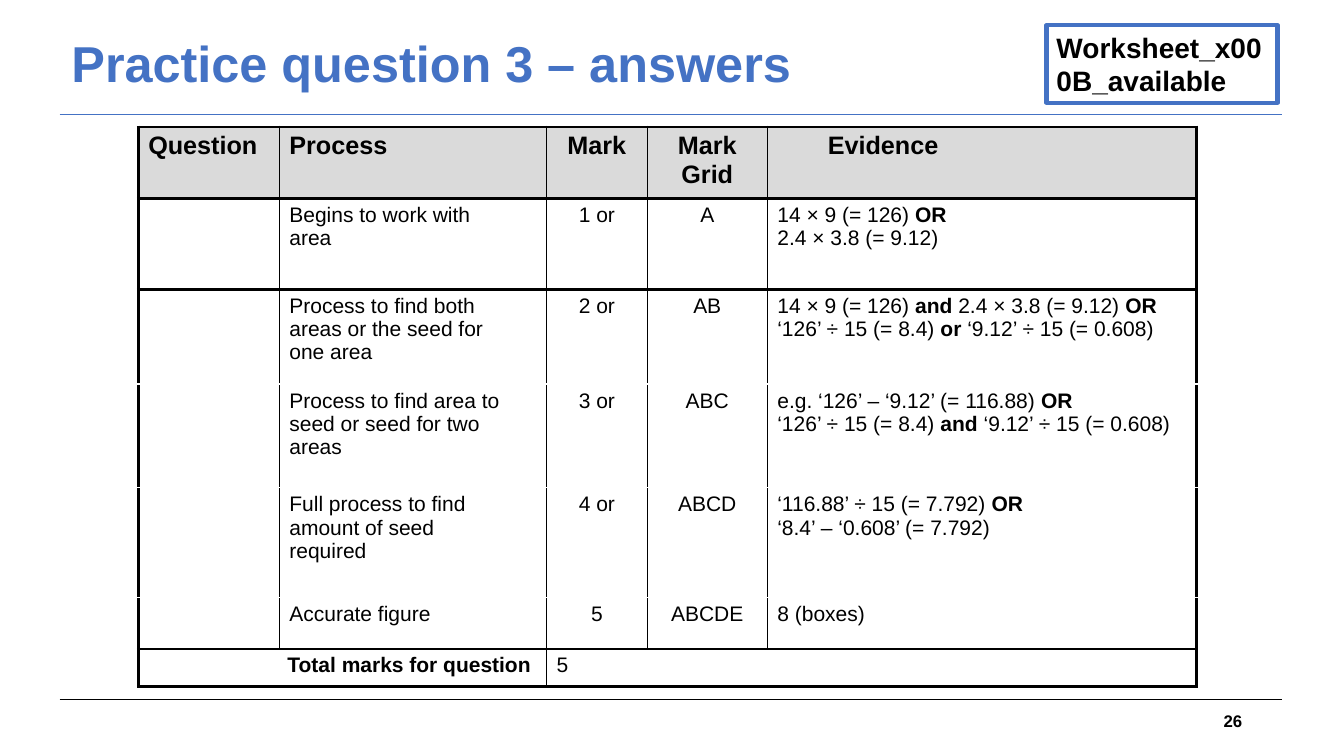
from lxml import etree
from pptx import Presentation
from pptx import util as u
from pptx.dml import color
from pptx.enum import shapes, text
from pptx.oxml import ns

BLUE, BLACK, WHITE, GREY = "4472C4", "000000", "FFFFFF", "DADADA"
LEFT, MID, RIGHT = text.PP_ALIGN.LEFT, text.PP_ALIGN.CENTER, text.PP_ALIGN.RIGHT


def tint(code):
    return color.RGBColor.from_string(code)


def write(para, words, size, code, bold, align):
    para.alignment = align
    for n, part in enumerate(words.split("*")):
        if part:
            run = para.add_run()
            run.text = part
            run.font.name = "Arial"
            run.font.size = u.Pt(size)
            run.font.bold = bold or n % 2 == 1
            run.font.color.rgb = tint(code)


deck = Presentation()
deck.slide_width, deck.slide_height = u.Inches(13.33), u.Inches(7.5)
col, row = deck.slide_width / 100, deck.slide_height / 100
slide = deck.slides.add_slide(deck.slide_layouts[6])
items = slide.shapes

for high, code in ((92.53, BLACK), (15.2, BLUE)):
    y = int(high * row)
    rule = items.add_connector(shapes.MSO_CONNECTOR.STRAIGHT, int(4.43 * col), y, int(95.42 * col), y)
    rule.line.color.rgb = tint(code)
    rule.line.width = u.Pt(0.75)
    etree.SubElement(rule.element.spPr, ns.qn("a:effectLst"))

labels = [
    ("Practice question 3 – answers", (4.58, 1.33, 65.19, 14.8), 36, BLUE, LEFT, False),
    ("26", (70.67, 92.67, 22.5, 5.33), 12, BLACK, RIGHT, False),
    ("Worksheet\vavailable", (77.87, 3.33, 17.18, 10.27), 20, BLACK, LEFT, True),
]
for words, place, size, code, align, framed in labels:
    spot = [int(v * s) for v, s in zip(place, (col, row, col, row))]
    if framed:
        box = items.add_shape(shapes.MSO_SHAPE.RECTANGLE, *spot)
        box.shadow.inherit = False
        box.fill.background()
        box.line.color.rgb = tint(BLUE)
        box.line.width = u.Pt(3)
    else:
        box = items.add_textbox(*spot)
    frame = box.text_frame
    frame.word_wrap = True
    frame.vertical_anchor = text.MSO_ANCHOR.TOP if framed else text.MSO_ANCHOR.MIDDLE
    write(frame.paragraphs[0], words, size, code, True, align)
    if size == 36:
        frame.paragraphs[0].line_spacing = 0.9

rows = [
    ["Question", "Process", "Mark", "Mark Grid", "Evidence"],
    ["", "Begins to work with\narea", "1 or", "A",
     "14 × 9 (= 126) *OR\n2.4 × 3.8 (= 9.12)"],
    ["", "Process to find both\nareas or the seed for\none area", "2 or", "AB",
     "14 × 9 (= 126) *and *2.4 × 3.8 (= 9.12) *OR\n‘126’ ÷ 15 (= 8.4) *or *‘9.12’ ÷ 15 (= 0.608)"],
    ["", "Process to find area to seed or seed for two areas", "3 or", "ABC",
     "e.g. ‘126’ – ‘9.12’ (= 116.88) *OR\n‘126’ ÷ 15 (= 8.4) *and *‘9.12’ ÷ 15 (= 0.608)"],
    ["", "Full process to find amount of seed\nrequired", "4 or", "ABCD",
     "‘116.88’ ÷ 15 (= 7.792) *OR\n‘8.4’ – ‘0.608’ (= 7.792)"],
    ["", "Accurate figure", "5", "ABCDE", "8 (boxes)"],
    ["*Total marks for question", "", "5", "", ""],
]
wide = [10.5, 19.88, 7.5, 8.93, 31.96]
tall = [9.47, 12, 12.53, 13.73, 14.53, 6.8, 4.93]
last = len(rows) - 1
thick, thin, gap = (2.25, BLACK), (1, BLACK), (1, WHITE)
flat = [thick, thick, thick, gap, gap, gap, thin, thick]
sides = [thick] + [(0.75, BLACK)] * 4 + [thick]
ends = [thick, thin, thin, None, None, thick]

grid = items.add_table(len(rows), len(wide), int(10.28 * col), int(16.8 * row),
                       int(sum(wide) * col), int(sum(tall) * row)).table
grid.first_row = grid.horz_banding = False
for c, share in enumerate(wide):
    grid.columns[c].width = int(share * col)
for r, share in enumerate(tall):
    grid.rows[r].height = int(share * row)
grid.cell(last, 0).merge(grid.cell(last, 1))

for r, line in enumerate(rows):
    size = 15 if r else 18
    edge = ends if r == last else sides
    for c, words in enumerate(line):
        cell = grid.cell(r, c)
        frame = cell.text_frame
        align = MID if c in (2, 3) and r < last else LEFT
        for n, part in enumerate(words.split("\n")):
            para = frame.add_paragraph() if n else frame.paragraphs[0]
            write(para, part, size, BLACK, r == 0, align)
        first = frame.paragraphs[0]
        if not words:
            etree.SubElement(first._p, ns.qn("a:endParaRPr"), sz=str(size * 100))
        inset = {(0, 4): 0.5, (last, 0): 1.38}.get((r, c))
        if inset:
            first._p.get_or_add_pPr().set("marL", str(u.Inches(inset)))
        props = cell._tc.get_or_add_tcPr()
        for tag, pen in zip("LRTB", (edge[c], edge[c + 1], flat[r], flat[r + 1])):
            stroke = etree.SubElement(props, ns.qn("a:ln" + tag))
            if pen:
                stroke.set("w", str(u.Pt(pen[0])))
                fill = etree.SubElement(stroke, ns.qn("a:solidFill"))
                etree.SubElement(fill, ns.qn("a:srgbClr"), val=pen[1])
            else:
                etree.SubElement(stroke, ns.qn("a:noFill"))
        cell.fill.solid()
        cell.fill.fore_color.rgb = tint(WHITE if r else GREY)

deck.save("out.pptx")
